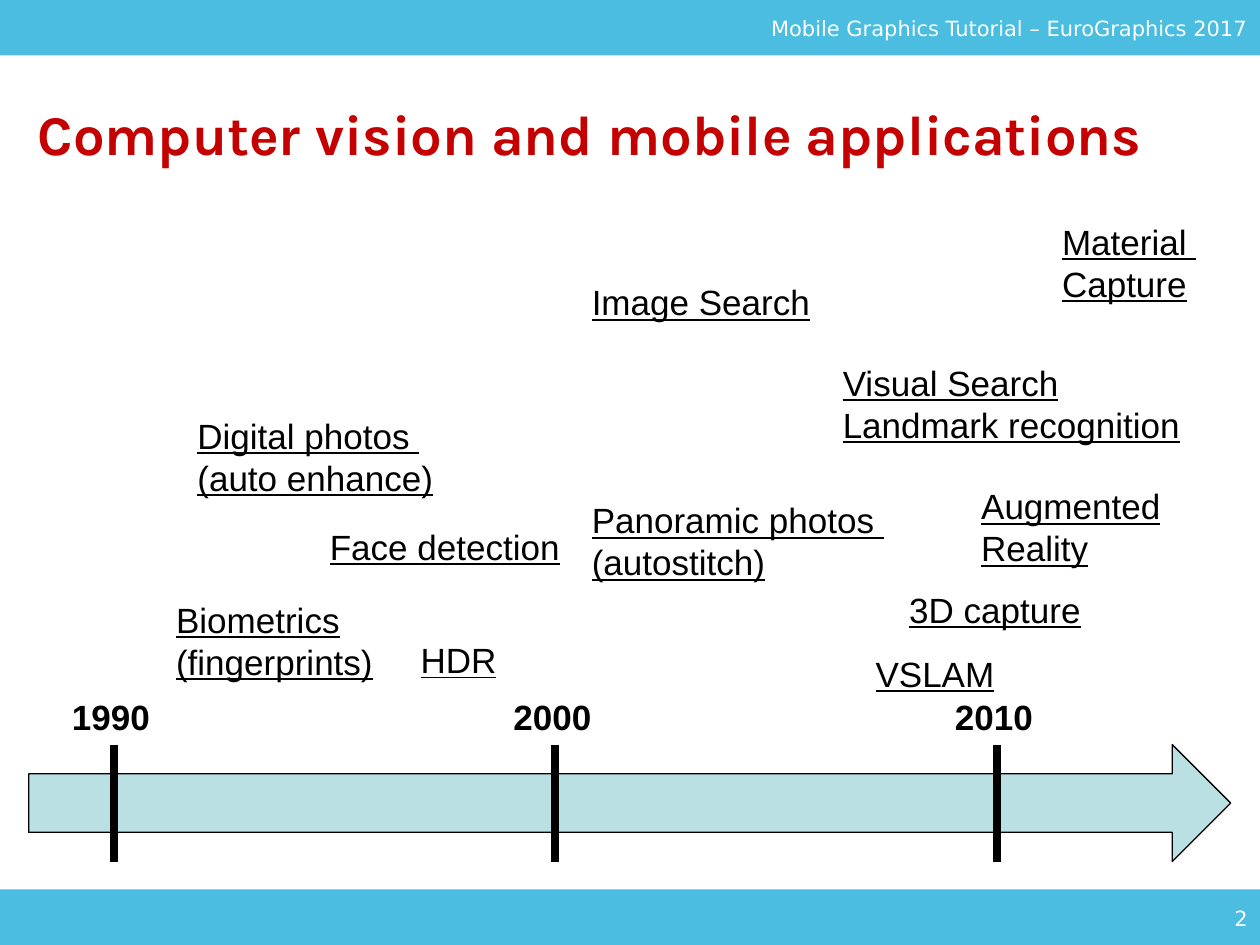
from lxml import etree
from pptx import Presentation
from pptx.dml.color import RGBColor
from pptx.enum.shapes import MSO_CONNECTOR, MSO_SHAPE
from pptx.enum.text import MSO_ANCHOR, PP_ALIGN
from pptx.oxml.ns import qn
from pptx.util import Cm, Pt

RECTANGLE, RIGHT_ARROW = MSO_SHAPE.RECTANGLE, MSO_SHAPE.RIGHT_ARROW
STRAIGHT = MSO_CONNECTOR.STRAIGHT
TOP, MIDDLE = MSO_ANCHOR.TOP, MSO_ANCHOR.MIDDLE
LEFT, RIGHT = PP_ALIGN.LEFT, PP_ALIGN.RIGHT

BLUE = RGBColor(0x4A, 0xBD, 0xE0)
PALE = RGBColor(0xBB, 0xE0, 0xE3)
RED = RGBColor(0xC4, 0x00, 0x00)
BLACK = RGBColor(0, 0, 0)
WHITE = RGBColor(255, 255, 255)

HEADER = "Mobile Graphics Tutorial – EuroGraphics 2017"
TITLE = "Computer vision and mobile applications"
PAGE_NUMBER = "2"
YEARS = ["1990", "2000", "2010"]
# text, (left, top, width, height) in cm
APPLICATIONS = [
    ("Panoramic photos \n(autostitch)", (11.68, 9.93, 9.86, 2.34)),
    ("Digital photos \n(auto enhance)", (3.73, 8.23, 9.86, 2.24)),
    ("3D capture", (18.08, 11.73, 4.24, 1.17)),
    ("Biometrics\n(fingerprints)", (3.3, 11.94, 4.47, 2.34)),
    ("Visual Search\nLandmark recognition", (16.74, 7.16, 9.86, 2.34)),
    ("Image Search", (11.68, 5.54, 5.05, 1.17)),
    ("Face detection", (6.4, 10.46, 9.86, 1.27)),
    ("VSLAM", (17.4, 13.03, 2.9, 1.17)),
    ("HDR", (8.23, 12.75, 1.83, 1.12)),
    ("Augmented\nReality", (19.53, 9.65, 4.24, 2.87)),
    ("Material \nCapture", (21.16, 4.32, 4.24, 2.87)),
]

WIDTH, HEIGHT, BAND = 25.4, 19.05, 1.12
ARROW_TOP, ARROW_HEIGHT = 15.01, 2.36
FIRST_TICK, DECADE = 2.29, 8.9
YEAR_SHIFT, YEAR_TOP, YEAR_SIZE = 1.09, 13.89, 2.54


def add_filled(page, kind, place, fill, line=None):
    shape = page.shapes.add_shape(kind, *map(Cm, place))
    shape.shadow.inherit = False
    shape.fill.solid()
    shape.fill.fore_color.rgb = fill
    if line is None:
        shape.line.fill.background()
    else:
        shape.line.color.rgb = line
        shape.line.width = Pt(0.75)
    return shape


def write(shape, text, size, font, color, align=LEFT, anchor=TOP, bold=False, underline=False):
    frame = shape.text_frame
    frame.text = text
    frame.word_wrap = True
    frame.vertical_anchor = anchor
    for para in frame.paragraphs:
        para.alignment = align
        for span in para.runs:
            span.font.size = Pt(size)
            span.font.name = font
            span.font.color.rgb = color
            span.font.bold = bold
            span.font.underline = underline


def add_text(page, place, *args, **style):
    box = page.shapes.add_textbox(*map(Cm, place))
    write(box, *args, **style)
    return box


def add_tick(page, x):
    tick = page.shapes.add_connector(
        STRAIGHT, Cm(x), Cm(ARROW_TOP), Cm(x), Cm(ARROW_TOP + ARROW_HEIGHT))
    tick.line.color.rgb = BLACK
    tick.line.width = Pt(4.5)
    etree.SubElement(tick._element.spPr, qn("a:effectLst"))


def main():
    deck = Presentation()
    deck.slide_width, deck.slide_height = Cm(WIDTH), Cm(HEIGHT)
    page = deck.slides.add_slide(deck.slide_layouts[6])

    add_filled(page, RECTANGLE, (0, HEIGHT - BAND, WIDTH, BAND), BLUE)
    header = add_filled(page, RECTANGLE, (0, 0, WIDTH, BAND), BLUE)
    write(header, HEADER, 12, "DejaVu Sans", WHITE, align=RIGHT, anchor=MIDDLE)
    add_text(page, (0.51, 1.32, 24.41, 2.74), TITLE, 32, "Karla", RED,
             anchor=MIDDLE, bold=True)
    add_text(page, (20.12, 18.14, 5.28, 0.64), PAGE_NUMBER, 12, "DejaVu Sans",
             WHITE, align=RIGHT)

    add_filled(page, RIGHT_ARROW, (0.58, ARROW_TOP, 24.23, ARROW_HEIGHT), PALE, BLACK)
    for index, year in enumerate(YEARS):
        x = FIRST_TICK + index * DECADE
        add_tick(page, x)
        add_text(page, (x - YEAR_SHIFT, YEAR_TOP, YEAR_SIZE, YEAR_SIZE),
                 year, 20, "Arial", BLACK, bold=True)

    for text, place in APPLICATIONS:
        box = add_text(page, place, text, 20, "Arial", BLACK, underline=True)
        box.text_frame.margin_right = 0

    deck.save("out.pptx")


if __name__ == "__main__":
    main()
